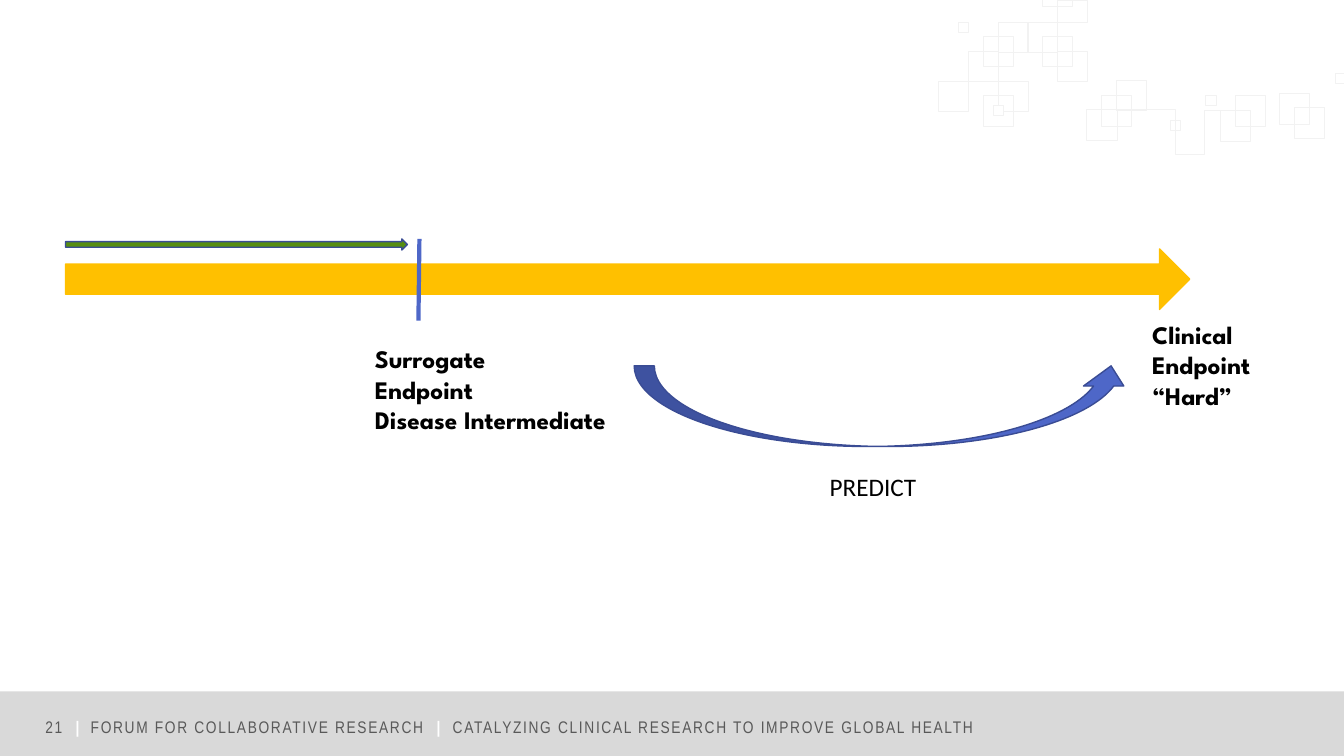
from pptx import Presentation
from pptx.dml.color import RGBColor
from pptx.enum.shapes import MSO_CONNECTOR as Connector, MSO_SHAPE as Shape
from pptx.enum.text import MSO_ANCHOR as Anchor, MSO_AUTO_SIZE as AutoSize
from pptx.oxml.ns import qn
from pptx.util import Inches, Pt
from lxml.etree import SubElement

COLORS = {
    "white": "FFFFFF", "black": "000000", "band": "D9D9D9", "footer": "595959",
    "pattern": "F2F2F2", "timeline": "FFC000", "progress": "568D11",
    "blue": "4E67C8", "outline": "3A4C94",
}
HEADING = {"name": "League Spartan", "size": Pt(18), "bold": True}
CAPTION = {"name": "Calibri", "size": Pt(18), "bold": False}
FOOTER = {"name": "Arial Narrow", "size": Pt(12)}

LARGE, SMALL = 0.3, 0.1
LARGE_SQUARES = [
    (2.94, 0.95), (2.79, 1.1), (0.59, 0.22), (0.29, 0.51), (0.44, 0.36),
    (0.59, 0.81), (0.44, 0.95), (0, 0.81), (0.88, 0.22), (1.18, 0.51),
    (1.03, 0.36), (1.47, 1.09), (1.76, 0.8), (1.61, 0.95), (3.53, 1.07),
    (3.38, 0.93),
]
SMALL_SQUARES = [(0.54, 1.05), (2.65, 0.95), (3.93, 0.73), (0.2, 0.22)]
OPEN_LINES = [
    [(1.03, 0), (1.03, 0.06), (1.33, 0.06), (1.33, 0)],
    [(1.47, 1.09), (2.35, 1.09), (2.35, 1.53), (2.64, 1.53), (2.64, 1.1), (2.95, 1.1)],
]


def color(name):
    return RGBColor.from_string(COLORS[name])


def style(shape, fill, line, width):
    shape.shadow.inherit = False
    if fill:
        shape.fill.solid()
        shape.fill.fore_color.rgb = color(fill)
    else:
        shape.fill.background()
    if line:
        shape.line.color.rgb = color(line)
        shape.line.width = Pt(width)
    else:
        shape.line.fill.background()


def add_block(page, kind, box, fill=None, line=None, width=1):
    shape = page.shapes.add_shape(kind, *map(Inches, box))
    style(shape, fill, line, width)


def format_font(font, values, color_name):
    for name, value in values.items():
        setattr(font, name, value)
    font.color.rgb = color(color_name)


def add_label(page, box, lines, values):
    label = page.shapes.add_textbox(*map(Inches, box))
    frame = label.text_frame
    frame.word_wrap = False
    frame.auto_size = AutoSize.SHAPE_TO_FIT_TEXT
    for index, line in enumerate(lines):
        para = frame.paragraphs[0] if index == 0 else frame.add_paragraph()
        span = para.add_run()
        span.text = line
        format_font(span.font, values, "black")


def draw_pattern(page, box):
    left, top, width, height = box
    for x, y in LARGE_SQUARES:
        add_block(page, Shape.RECTANGLE, (left + x, top + y, LARGE, LARGE),
                  line="pattern", width=0.5)
    add_block(page, Shape.RECTANGLE, (left + 1.18, top, LARGE, 0.22),
              line="pattern", width=0.5)
    add_block(page, Shape.RECTANGLE, (left + 2.3, top + 1.19, SMALL, SMALL),
              line="pattern", width=0.5)
    for x, y in SMALL_SQUARES:
        side = min(SMALL, width - x)
        add_block(page, Shape.RECTANGLE, (left + x, top + y, side, SMALL),
                  "white", "pattern", 0.5)
    for line in OPEN_LINES:
        points = [(Inches(left + x), Inches(top + y)) for x, y in line]
        builder = page.shapes.build_freeform(*points[0])
        builder.add_line_segments(points[1:], close=False)
        style(builder.convert_to_shape(), None, "pattern", 0.5)


def draw_footer(page, box):
    left, top, width, height = box
    add_block(page, Shape.RECTANGLE, box, "band")
    label = page.shapes.add_textbox(
        Inches(left), Inches(top + 0.14), Inches(width), Inches(0.42))
    frame = label.text_frame
    frame.word_wrap = True
    frame.vertical_anchor = Anchor.MIDDLE
    margins = {"margin_left": 0.45, "margin_right": 0.1, "margin_top": 0, "margin_bottom": 0}
    for name, value in margins.items():
        setattr(frame, name, Inches(value))
    para = frame.paragraphs[0]
    stops = SubElement(para._p.get_or_add_pPr(), qn("a:tabLst"))
    for position in (0.3, 0.45, 3.88, 4.04):
        SubElement(stops, qn("a:tab"), pos=str(Inches(position)), algn="l")
    parts = ["21\t", "|\t", "FORUM FOR COLLABORATIVE RESEARCH\t", "|\t",
             "CATALYZING CLINICAL RESEARCH TO IMPROVE GLOBAL HEALTH"]
    for text in parts:
        divider = text.startswith("|")
        span = para.add_run()
        span.text = text
        format_font(span.font, FOOTER, "white" if divider else "footer")
        span.font.bold = divider
        span.font._element.set("spc", "120")


def draw_timeline(page, box):
    left, top, width, height = box
    add_block(page, Shape.RIGHT_ARROW, (left, top + 0.1, 11.15, 0.6), "timeline", "timeline")
    add_label(page, (left + 10.68, top + 0.75, 1.27, 1.01),
              ["Clinical", "Endpoint", "“Hard”"], HEADING)
    add_block(page, Shape.RIGHT_ARROW, (left, top, 3.39, 0.11), "progress", "outline")
    marker = page.shapes.add_connector(
        Connector.STRAIGHT, Inches(left + 3.51), Inches(top),
        Inches(left + 3.5), Inches(top + 0.81))
    marker.line.color.rgb = color("blue")
    marker.line.width = Pt(3)
    SubElement(marker._element.spPr, qn("a:effectLst"))
    add_label(page, (left + 2.97, top + 0.99, 2.79, 1.01),
              ["Surrogate", "Endpoint", "Disease Intermediate"], HEADING)
    add_block(page, Shape.CURVED_UP_ARROW, (left + 5.64, top + 1.26, 4.93, 0.8),
              "blue", "outline")
    add_label(page, (left + 7.48, top + 2.26, 1.07, 0.4), ["PREDICT"], CAPTION)


def main():
    deck = Presentation()
    deck.slide_width, deck.slide_height = Inches(13.33), Inches(7.5)
    page = deck.slides.add_slide(deck.slide_layouts[6])
    page.background.fill.solid()
    page.background.fill.fore_color.rgb = color("white")
    draw_footer(page, (0, 6.86, 13.33, 0.64))
    draw_pattern(page, (9.31, 0, 4.02, 1.53))
    draw_timeline(page, (0.65, 2.37, 11.95, 2.66))
    deck.save("out.pptx")


if __name__ == "__main__":
    main()
